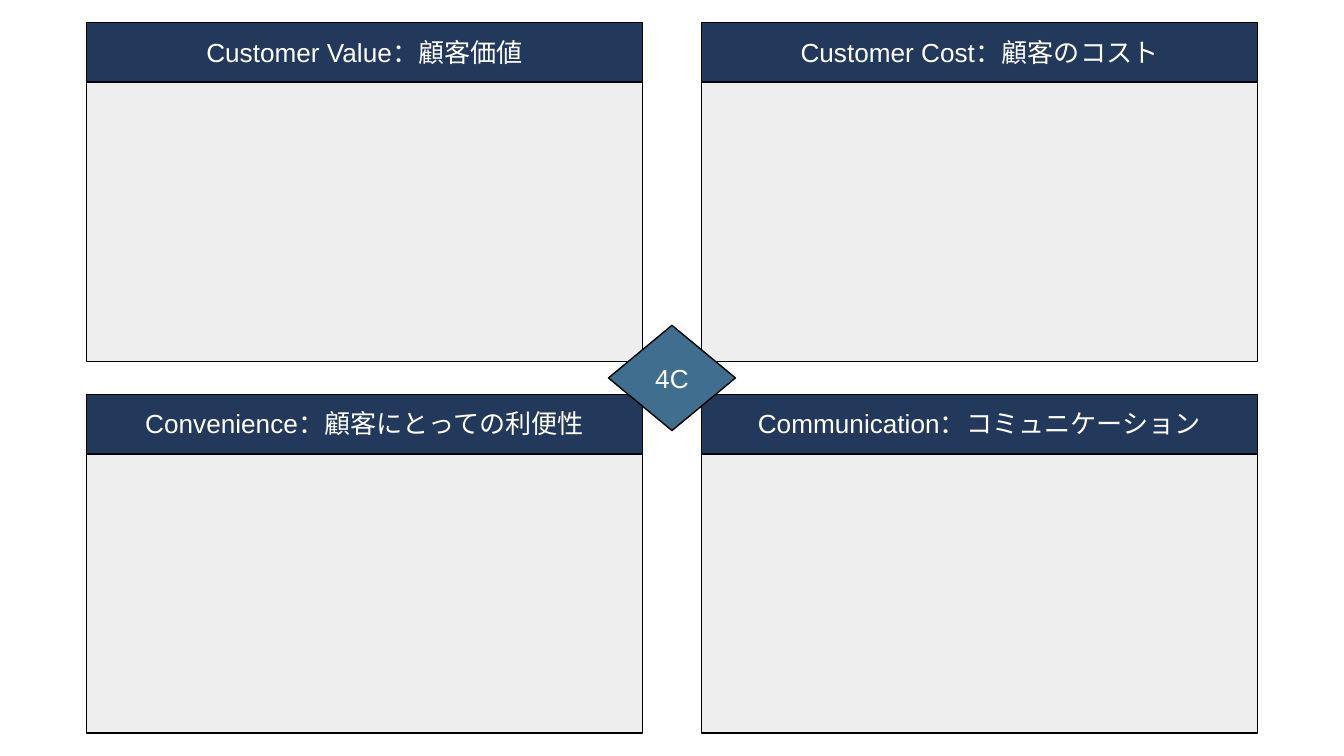
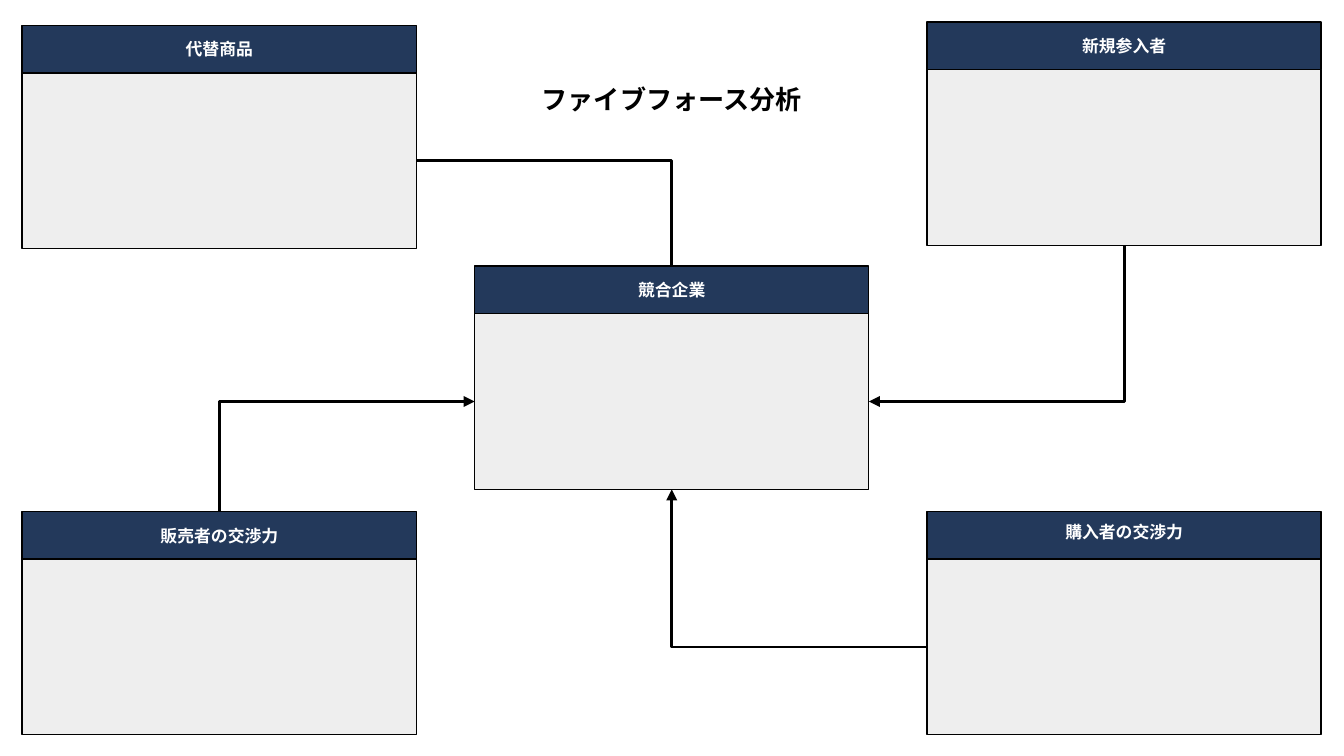
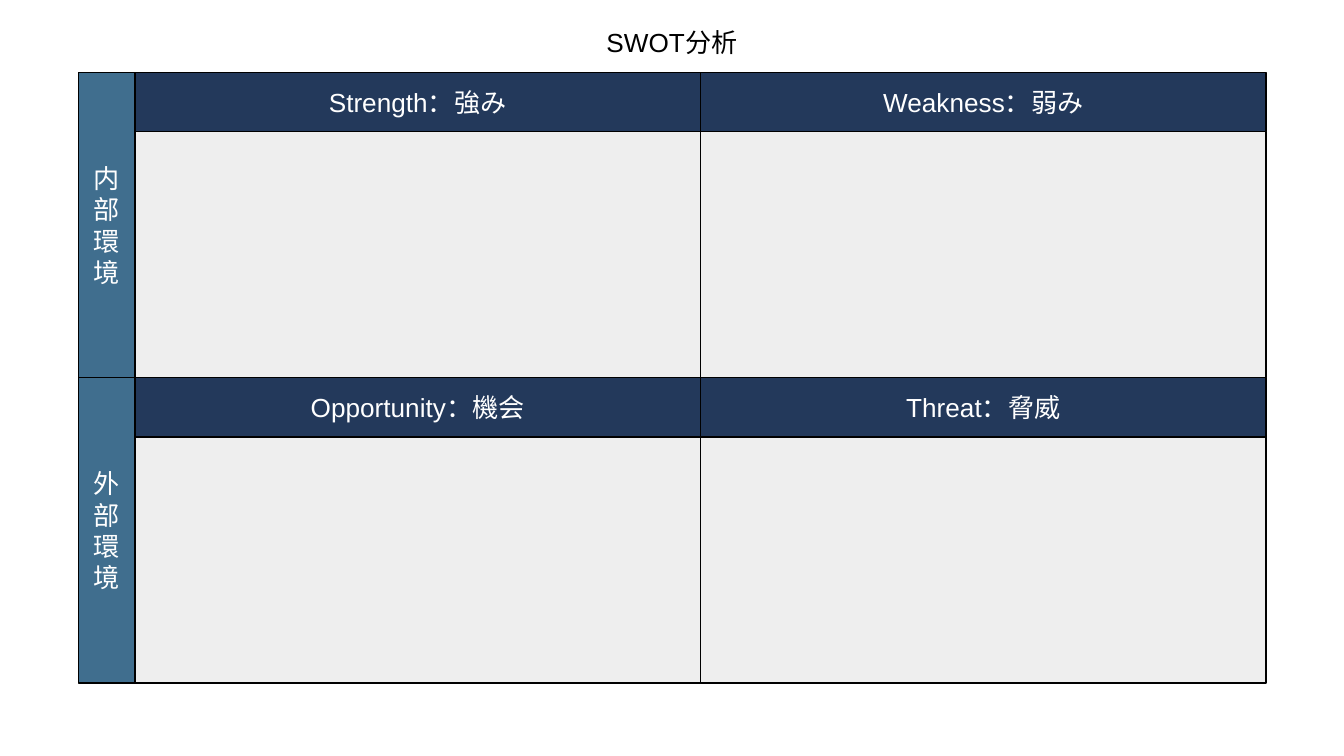
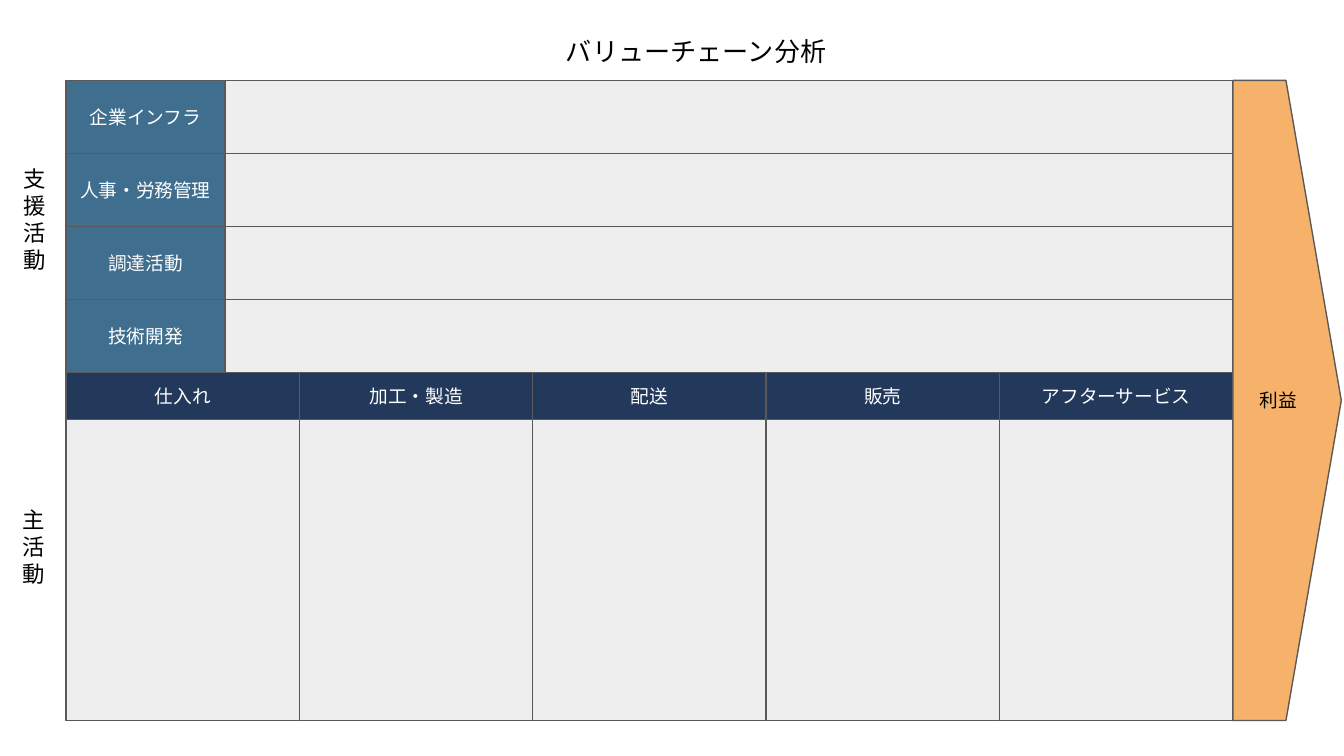
from itertools import product

from lxml.etree import SubElement
from pptx import Presentation
from pptx.dml.color import RGBColor
from pptx.enum.shapes import MSO_CONNECTOR, MSO_SHAPE
from pptx.enum.text import MSO_ANCHOR, MSO_AUTO_SIZE, PP_ALIGN
from pptx.oxml.ns import qn
from pptx.util import Cm, Pt

NAVY = RGBColor(0x23, 0x39, 0x5B)
TEAL = RGBColor(0x40, 0x6E, 0x8E)
PALE = RGBColor(0xEE, 0xEE, 0xEE)
AMBER = RGBColor(0xF6, 0xB2, 0x6B)
GREY = RGBColor(0x59, 0x59, 0x59)
BLACK = RGBColor(0, 0, 0)
WHITE = RGBColor(0xFF, 0xFF, 0xFF)
FONT = "Arial"
INSET = 0.25
HEAD = 1.12  # height of titles and large headings


def write(shape, text, size, color, bold=False, grow=False, indent=0):
    """Centre text in a shape; grow fits the shape to text set from its top."""
    frame = shape.text_frame
    frame.word_wrap = True
    frame.auto_size = MSO_AUTO_SIZE.SHAPE_TO_FIT_TEXT if grow else MSO_AUTO_SIZE.NONE
    frame.vertical_anchor = MSO_ANCHOR.TOP if grow else MSO_ANCHOR.MIDDLE
    frame.margin_left = Cm(INSET + indent)
    frame.margin_right = frame.margin_top = frame.margin_bottom = Cm(INSET)
    par = frame.paragraphs[0]
    par.text = text
    par.alignment = PP_ALIGN.CENTER
    font = par.font
    font.name, font.size, font.bold = FONT, Pt(size), bold
    font.color.rgb = color


def box(slide, area, fill, text="", size=14, color=WHITE, edge=BLACK,
        kind=MSO_SHAPE.RECTANGLE, **style):
    shape = slide.shapes.add_shape(kind, *map(Cm, area))
    shape.shadow.inherit = False
    shape.fill.solid()
    shape.fill.fore_color.rgb = fill
    shape.line.color.rgb = edge
    shape.line.width = Pt(0.75)
    if text:
        write(shape, text, size, color, **style)
    return shape


def label(slide, area, text, size=14, **style):
    frame = slide.shapes.add_textbox(*map(Cm, area))
    write(frame, text, size, BLACK, **style)


def panel(slide, x, y, width, depth, text, **style):
    """Draw a pale field under a navy heading."""
    box(slide, (x, y + HEAD, width, depth), PALE)
    box(slide, (x, y, width, HEAD), NAVY, text, **style)


def elbow(slide, start, side, end, goal, turn):
    """Join two boxes by one right-angled arrow, turned clockwise in degrees."""
    link = slide.shapes.add_connector(MSO_CONNECTOR.ELBOW, 0, 0, 0, 0)
    link.begin_connect(start, side)
    link.end_connect(end, goal)
    props = link._element.spPr
    props.find(qn("a:prstGeom")).set("prst", "bentConnector2")
    frame = props.xfrm
    frame.flipH = frame.flipV = False
    frame.rot = turn
    if turn % 180:
        wide, high = link.width, link.height
        link.left += (wide - high) // 2
        link.top += (high - wide) // 2
        link.width, link.height = high, wide
    link.line.color.rgb = BLACK
    link.line.width = Pt(1.5)
    SubElement(link.line._get_or_add_ln(), qn("a:tailEnd"), type="triangle")
    SubElement(props, qn("a:effectLst"))


def four_c(slide):
    names = ("Customer Value：顧客価値", "Customer Cost：顧客のコスト",
             "Convenience：顧客にとっての利便性", "Communication：コミュニケーション")
    for (row, col), name in zip(product(range(2), repeat=2), names):
        panel(slide, 1.64 + 11.62 * col, 0.43 + 7.03 * row, 10.51, 5.28,
              name, grow=True)
    box(slide, (11.5, 6.15, 2.4, 1.99), TEAL, "4C", kind=MSO_SHAPE.DIAMOND)


def five_forces(slide):
    width, head, depth = 7.45, 0.9, 3.32
    left, mid, right = (0.42 + 8.55 * col for col in range(3))
    forces = (("代替商品", left, 0.48), ("競合企業", mid, 5.03),
              ("新規参入者", right, 0.42), ("購入者の交渉力", right, 9.67),
              ("販売者の交渉力", left, 9.67))
    subs, rival, entrant, buyer, seller = [
        box(slide, (x, y + head, width, depth), PALE) for _, x, y in forces]
    elbow(slide, subs, 3, rival, 0, 0)
    elbow(slide, entrant, 2, rival, 3, 90)
    elbow(slide, buyer, 1, rival, 2, 180)
    elbow(slide, seller, 0, rival, 1, 270)
    for name, x, y in forces:
        box(slide, (x, y, width, head), NAVY, name, size=9, bold=True,
            grow=name == "購入者の交渉力")
    label(slide, (8.39, 1.32, 8.62, HEAD), "ファイブフォース分析",
          bold=True, grow=True)


def swot(slide):
    side, top, band, width, pitch = 1.48, 1.37, 1.07, 10.69, 5.77
    names = ("Strength：強み", "Weakness：弱み", "Opportunity：機会", "Threat：脅威")
    for (row, col), name in zip(product(range(2), repeat=2), names):
        panel(slide, side + band + width * col, top + pitch * row, width,
              pitch - HEAD, name)
    for row, name in enumerate(("内部環境", "外部環境")):
        box(slide, (side, top + pitch * row, band, pitch), TEAL, name)
    label(slide, (7.57, 0.25, 10.26, HEAD), "SWOT分析", grow=True)


def value_chain(slide):
    left, top, right = 1.25, 1.52, 23.3
    high, tag = 1.38, 3
    support = ("企業インフラ", "人事・労務管理", "調達活動", "技術開発")
    main_acts = ("仕入れ", "加工・製造", "配送", "販売", "アフターサービス")
    split = top + high * len(support)
    width = (right - left) / len(main_acts)
    head, depth = 0.89, 5.69
    style = {"size": 10, "edge": GREY}

    for col, name in enumerate(main_acts):
        x = left + width * col
        box(slide, (x, split + head, width, depth), PALE, edge=GREY)
        box(slide, (x, split, width, head), NAVY, name, **style)
    for row, name in enumerate(support):
        y = top + high * row
        box(slide, (left + tag, y, right - left - tag, high), PALE, edge=GREY)
        box(slide, (left, y, tag, high), TEAL, name, **style)

    profit = box(slide, (right, top, 2.05, split + head + depth - top), AMBER,
                 "利益", color=BLACK, kind=MSO_SHAPE.PENTAGON, indent=0.2, **style)
    profit.adjustments[0] = 0.51
    label(slide, (0.08, 1.22, 1.17, 5.84), "支援活動", 12)
    label(slide, (0.05, split, 1.17, head + depth), "主活動", 12)
    label(slide, (9.25, 0.41, 7.82, HEAD), "バリューチェーン分析")


def main():
    deck = Presentation()
    deck.slide_width, deck.slide_height = Cm(25.4), Cm(14.29)
    for draw in (four_c, five_forces, swot, value_chain):
        draw(deck.slides.add_slide(deck.slide_layouts[6]))
    deck.save("out.pptx")


if __name__ == "__main__":
    main()
